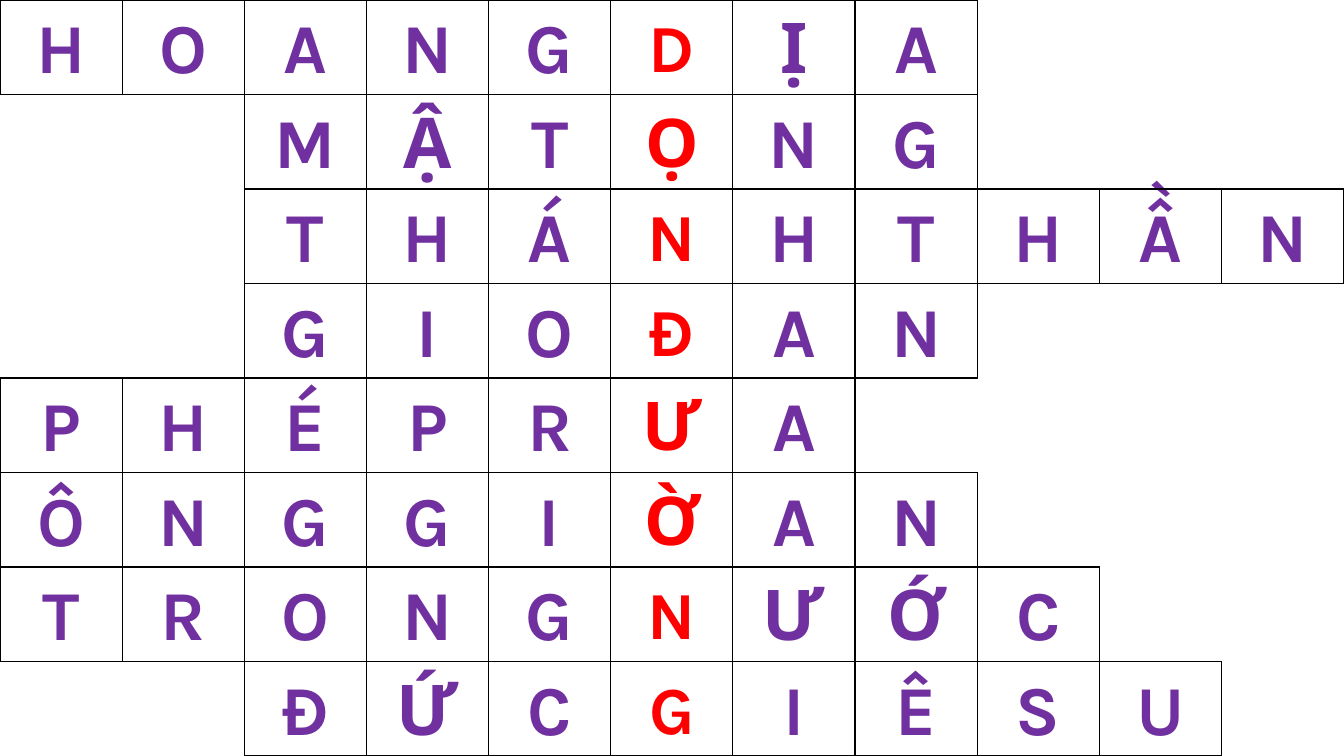
from dataclasses import dataclass

from lxml import etree
from pptx import Presentation
from pptx import util as u
from pptx.dml import color
from pptx.enum import text
from pptx.oxml import ns
from pptx.table import Table, _Cell

COLORS = {"paper": "FFFFFF", "grid": "000000", "letter": "7030A0", "key": "FF0000"}
FONT = "Karla"
SLIDE_WIDTH, SLIDE_HEIGHT = 960, 540
COLUMN_COUNT = 11
KEY_COLUMN = 5
SIDES = {"a:lnL": (0, -1), "a:lnR": (0, 1), "a:lnT": (-1, 0), "a:lnB": (1, 0)}


@dataclass(frozen=True)
class Answer:
    start: int
    word: str

    def letter_at(self, column: int) -> str:
        index = column - self.start
        return self.word[index] if 0 <= index < len(self.word) else ""


ANSWERS = [
    Answer(0, "HOANGDỊA"),
    Answer(2, "MẬTỌNG"),
    Answer(2, "THÁNHTHẦN"),
    Answer(2, "GIOĐAN"),
    Answer(0, "PHÉPRƯA"),
    Answer(0, "ÔNGGIỜAN"),
    Answer(0, "TRONGNƯỚC"),
    Answer(2, "ĐỨCGIÊSU"),
]


def letter_at(row: int, column: int) -> str:
    return ANSWERS[row].letter_at(column) if 0 <= row < len(ANSWERS) else ""


def draw_borders(square: _Cell, row: int, column: int) -> None:
    properties = square._tc.get_or_add_tcPr()
    for tag, (down, across) in SIDES.items():
        edge = etree.SubElement(properties, ns.qn(tag), w=str(u.Pt(1)))
        if letter_at(row, column) or letter_at(row + down, column + across):
            ink = etree.SubElement(edge, ns.qn("a:solidFill"))
            etree.SubElement(ink, ns.qn("a:srgbClr"), val=COLORS["grid"])
        else:
            etree.SubElement(edge, ns.qn("a:noFill"))


def write_letter(square: _Cell, letter: str, is_key: bool) -> None:
    square.vertical_anchor = text.MSO_ANCHOR.MIDDLE
    square.margin_left = square.margin_right = u.Pt(4.32)
    square.margin_top, square.margin_bottom = u.Pt(0.72), u.Pt(0)
    line = square.text_frame.paragraphs[0]
    line.text = letter
    line.alignment = text.PP_ALIGN.CENTER
    line.line_spacing = 1.07
    line.space_after = u.Pt(8)
    font = line.runs[0].font
    font.name = FONT
    font.bold = True
    font.size = u.Pt(48 if is_key else 50)
    font.color.rgb = color.RGBColor.from_string(COLORS["key" if is_key else "letter"])


def draw_square(crossword: Table, row: int, column: int) -> None:
    square = crossword.cell(row, column)
    draw_borders(square, row, column)
    square.fill.solid()
    square.fill.fore_color.rgb = color.RGBColor.from_string(COLORS["paper"])
    letter = letter_at(row, column)
    if letter:
        write_letter(square, letter, column == KEY_COLUMN)


def main() -> None:
    deck = Presentation()
    deck.slide_width, deck.slide_height = u.Pt(SLIDE_WIDTH), u.Pt(SLIDE_HEIGHT)
    slide = deck.slides.add_slide(deck.slide_layouts[6])
    crossword = slide.shapes.add_table(
        len(ANSWERS), COLUMN_COUNT, u.Pt(0), u.Pt(0), u.Pt(SLIDE_WIDTH), u.Pt(SLIDE_HEIGHT)
    ).table
    crossword.first_row = crossword.horz_banding = False
    for row in range(len(ANSWERS)):
        for column in range(COLUMN_COUNT):
            draw_square(crossword, row, column)
    deck.save("out.pptx")


if __name__ == "__main__":
    main()
